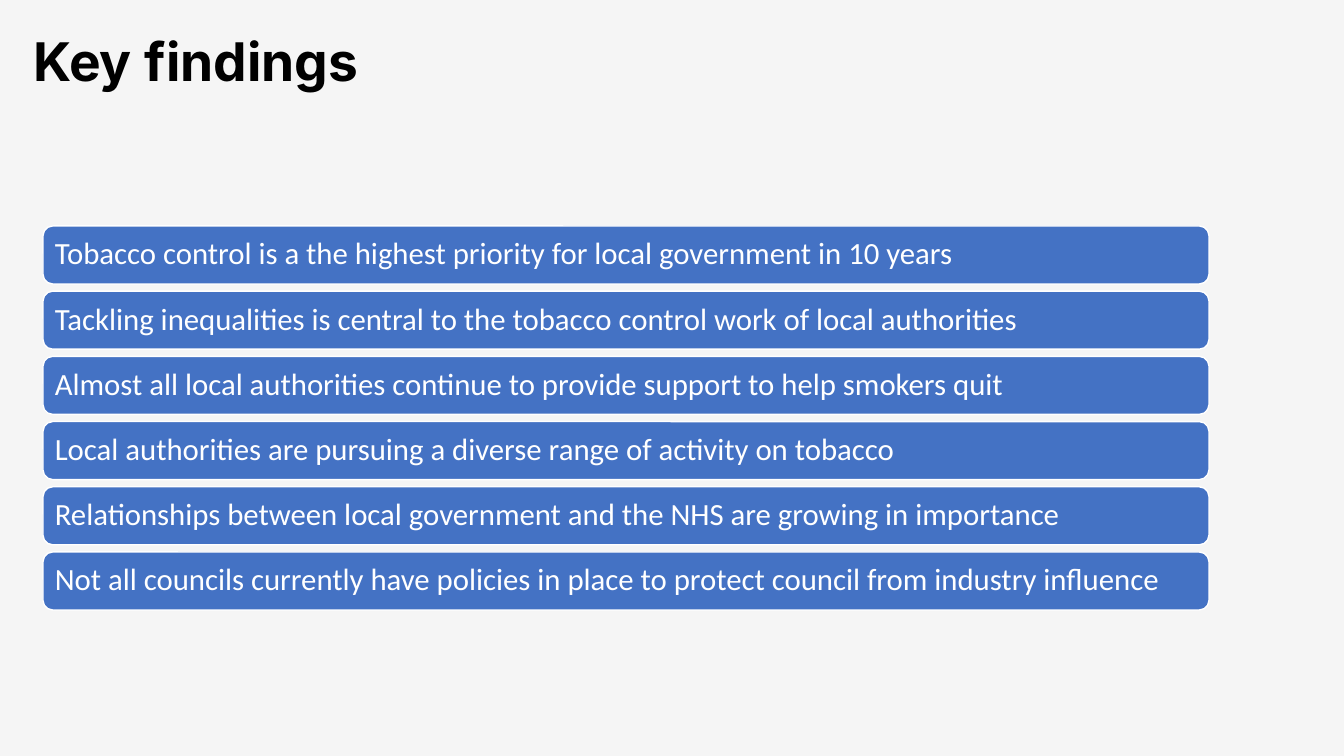
from pptx import Presentation
from pptx import util as u
from pptx.dml.color import RGBColor
from pptx.enum import shapes, text

PX = 914400 / 100.8
COLOURS = {"page": "F5F5F5", "title": "000000", "bar": "4472C4", "white": "FFFFFF"}
FINDINGS = [
    "Tobacco control is a the highest priority for local government in 10 years",
    "Tackling inequalities is central to the tobacco control work of local authorities",
    "Almost all local authorities continue to provide support to help smokers quit",
    "Local authorities are pursuing a diverse range of activity on tobacco",
    "Relationships between local government and the NHS are growing in importance",
    "Not all councils currently have policies in place to protect council from industry influence",
]


def px(length):
    return round(length * PX)


def colour(name):
    return RGBColor.from_string(COLOURS[name])


def write(shape, words, *, size, font, ink, bold=False, inset=9):
    frame = shape.text_frame
    frame.word_wrap = True
    frame.auto_size = text.MSO_AUTO_SIZE.NONE
    frame.vertical_anchor = text.MSO_ANCHOR.MIDDLE
    frame.margin_left = frame.margin_right = px(inset)
    frame.margin_top = frame.margin_bottom = px(5)
    para = frame.paragraphs[0]
    para.alignment = text.PP_ALIGN.LEFT
    para.line_spacing = 0.9
    span = para.add_run()
    span.text = words
    span.font.size = u.Pt(size)
    span.font.name = font
    span.font.bold = bold
    span.font.color.rgb = colour(ink)


def place_title(page, box, words):
    title = page.shapes.title
    title.left, title.top, title.width, title.height = map(px, box)
    write(title, words, size=38, font="Inter", ink="title", bold=True)


def place_findings(page, box, findings, bar_height=58):
    left, top, width, height = box
    pitch = (height - bar_height) / (len(findings) - 1)
    for row, finding in enumerate(findings):
        bar = page.shapes.add_shape(
            shapes.MSO_SHAPE.ROUNDED_RECTANGLE,
            px(left), px(top + row * pitch), px(width), px(bar_height),
        )
        bar.shadow.inherit = False
        bar.fill.solid()
        bar.fill.fore_color.rgb = colour("bar")
        bar.line.color.rgb = colour("white")
        bar.line.width = u.Pt(1)
        write(bar, finding, size=22, font="Calibri", ink="white")


def main():
    deck = Presentation()
    deck.slide_width, deck.slide_height = px(1344), px(756)
    page = deck.slides.add_slide(deck.slide_layouts.get_by_name("Title Only"))
    page.background.fill.solid()
    page.background.fill.fore_color.rgb = colour("page")
    place_title(page, (24, 0, 1207, 129), "Key findings")
    place_findings(page, (43, 226, 1166, 384), FINDINGS)
    deck.save("out.pptx")


if __name__ == "__main__":
    main()
